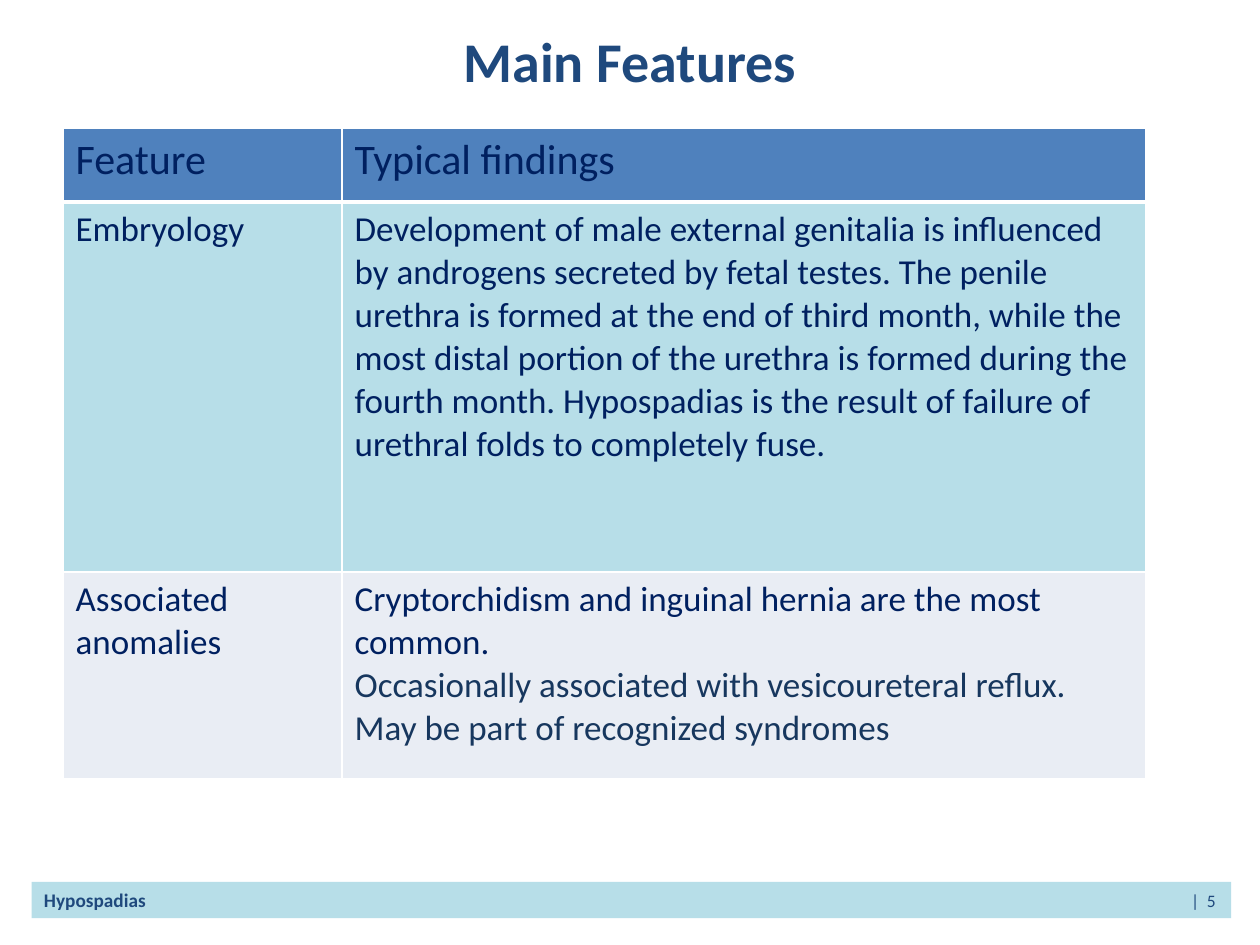
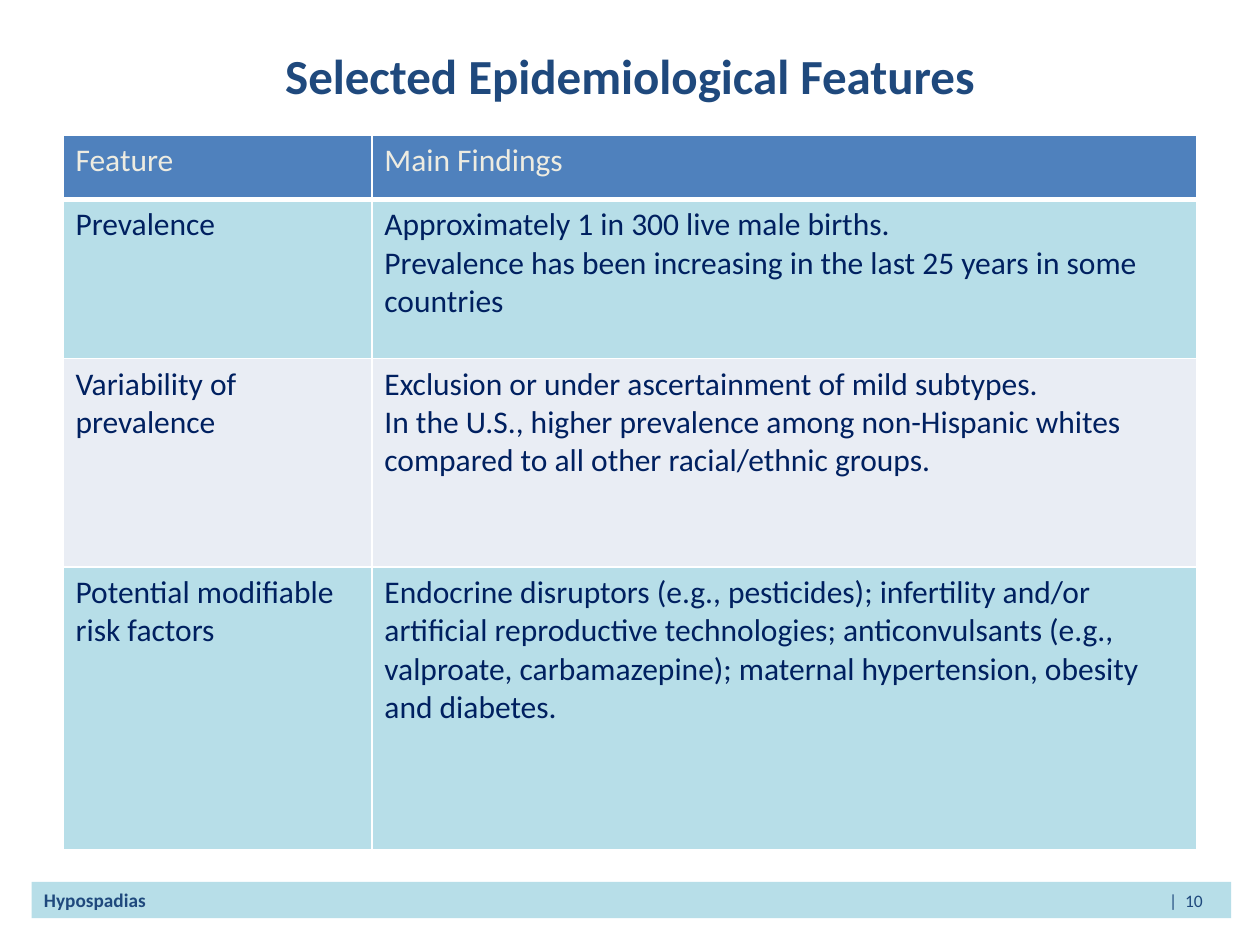
from dataclasses import dataclass

from lxml import etree
from pptx import Presentation
from pptx.dml.color import RGBColor
from pptx.enum.shapes import MSO_SHAPE
from pptx.enum.text import MSO_ANCHOR, PP_ALIGN
from pptx.oxml.ns import qn
from pptx.util import Pt

RECTANGLE = MSO_SHAPE.RECTANGLE
MIDDLE, TOP = MSO_ANCHOR.MIDDLE, MSO_ANCHOR.TOP
LEFT, CENTER = PP_ALIGN.LEFT, PP_ALIGN.CENTER
BLANK_LAYOUT = 6


@dataclass(frozen=True)
class Theme:
    font: str = "Calibri"
    heading: str = "1F497D"
    body: str = "002060"
    secondary: str = "17375E"
    pale: str = "EEECE1"
    header_fill: str = "4F81BD"
    band_fills: tuple = ("B7DEE8", "E9EDF4")
    border: str = "FFFFFF"
    border_width: float = 1
    header_rule: float = 3
    topic_size: float = 11
    page_size: float = 10


class Deck:
    """Holds the theme and the slide being built."""

    def __init__(self, presentation, theme):
        self.presentation = presentation
        self.theme = theme
        self.slide = None

    def new_slide(self):
        layout = self.presentation.slide_layouts[BLANK_LAYOUT]
        self.slide = self.presentation.slides.add_slide(layout)

    def run(self, paragraph, text, size, color, bold=False):
        run = paragraph.add_run()
        run.text = text
        run.font.name = self.theme.font
        run.font.size = Pt(size)
        run.font.bold = bold
        run.font.color.rgb = RGBColor.from_string(color)

    def title(self, text, top, height, size):
        shape = self.slide.shapes.add_textbox(Pt(36), Pt(top), Pt(648), Pt(height))
        frame = shape.text_frame
        frame.word_wrap = True
        frame.vertical_anchor = MIDDLE
        paragraph = frame.paragraphs[0]
        paragraph.alignment = CENTER
        self.run(paragraph, text, size, self.theme.heading, bold=True)

    def footer(self, topic, page, page_tab):
        theme = self.theme
        shape = self.slide.shapes.add_shape(RECTANGLE, Pt(18), Pt(504), Pt(685.5), Pt(20.7))
        shape.shadow.inherit = False
        shape.fill.solid()
        shape.fill.fore_color.rgb = RGBColor.from_string(theme.band_fills[0])
        shape.line.fill.background()
        shape.text_frame.vertical_anchor = TOP
        paragraph = shape.text_frame.paragraphs[0]
        paragraph.alignment = LEFT
        # A tab stop places the page number
        properties = paragraph._p.get_or_add_pPr()
        tabs = etree.SubElement(properties, qn("a:tabLst"))
        etree.SubElement(tabs, qn("a:tab"), pos=str(Pt(page_tab)), algn="l")
        self.run(paragraph, topic + "\t", theme.topic_size, theme.heading, bold=True)
        self.run(paragraph, f"|  {page}", theme.page_size, theme.heading)

    def borders(self, cell, bottom_width):
        properties = cell._tc.get_or_add_tcPr()
        for side in "LRTB":
            width = bottom_width if side == "B" else self.theme.border_width
            line = etree.SubElement(properties, qn(f"a:ln{side}"), w=str(Pt(width)))
            fill = etree.SubElement(line, qn("a:solidFill"))
            etree.SubElement(fill, qn("a:srgbClr"), val=self.theme.border)

    def cell(self, cell, paragraphs, size, fill, bottom_width):
        """Each paragraph is a (text, color) pair."""
        self.borders(cell, bottom_width)
        cell.fill.solid()
        cell.fill.fore_color.rgb = RGBColor.from_string(fill)
        frame = cell.text_frame
        for index, (text, color) in enumerate(paragraphs):
            paragraph = frame.add_paragraph() if index else frame.paragraphs[0]
            self.run(paragraph, text, size, color)

    def table(self, top, widths, heights, header, rows, header_size, header_color, body_size):
        theme = self.theme
        frame = self.slide.shapes.add_table(
            len(heights), len(widths), Pt(36), Pt(top), Pt(sum(widths)), Pt(sum(heights))
        )
        table = frame.table
        for column, width in zip(table.columns, widths):
            column.width = Pt(width)
        for row, height in zip(table.rows, heights):
            row.height = Pt(height)
        for column, text in enumerate(header):
            self.cell(table.cell(0, column), [(text, header_color)], header_size,
                      theme.header_fill, theme.header_rule)
        for index, (feature, findings) in enumerate(rows):
            fill = theme.band_fills[index % 2]
            for column, paragraphs in enumerate(([(feature, theme.body)], findings)):
                self.cell(table.cell(index + 1, column), paragraphs, body_size,
                          fill, theme.border_width)


def main():
    presentation = Presentation()
    presentation.slide_width, presentation.slide_height = Pt(720), Pt(540)
    theme = Theme()
    deck = Deck(presentation, theme)
    topic = "Hypospadias"

    # Main features
    deck.new_slide()
    deck.title("Main Features", top=15, height=39, size=32)
    deck.table(
        top=73.5, widths=(159.5, 459), heights=(42, 211.5, 118),
        header=("Feature", "Typical findings"),
        rows=[
            ("Embryology", [
                ("Development of male external genitalia is influenced by androgens secreted "
                 "by fetal testes. The penile urethra is formed at the end of third month, "
                 "while the most distal portion of the urethra is formed during the fourth "
                 "month. Hypospadias is the result of failure of urethral folds to completely "
                 "fuse.", theme.body),
            ]),
            ("Associated anomalies", [
                ("Cryptorchidism and inguinal hernia are the most common.", theme.body),
                ("Occasionally associated with vesicoureteral reflux.", theme.secondary),
                ("May be part of recognized syndromes", theme.secondary),
            ]),
        ],
        header_size=24, header_color=theme.body, body_size=20,
    )
    deck.footer(topic, page=5, page_tab=655.5)

    # Epidemiology
    deck.new_slide()
    deck.title("Selected Epidemiological Features", top=-2, height=90, size=28)
    deck.table(
        top=77.5, widths=(176.5, 471.5), heights=(36.5, 91, 119, 161.5),
        header=("Feature", "Main Findings"),
        rows=[
            ("Prevalence", [
                ("Approximately 1 in 300 live male births.", theme.body),
                ("Prevalence has been increasing in the last 25 years in some countries",
                 theme.body),
            ]),
            ("Variability of prevalence", [
                ("Exclusion or under ascertainment of mild subtypes.", theme.body),
                ("In the U.S., higher prevalence among non-Hispanic whites compared to all "
                 "other racial/ethnic groups.", theme.body),
            ]),
            ("Potential modifiable risk factors", [
                ("Endocrine disruptors (e.g., pesticides); infertility and/or artificial "
                 "reproductive technologies; anticonvulsants (e.g., valproate, "
                 "carbamazepine); maternal hypertension, obesity and diabetes.", theme.body),
            ]),
        ],
        header_size=18, header_color=theme.pale, body_size=18,
    )
    deck.footer(topic, page=10, page_tab=643)

    presentation.save("out.pptx")


if __name__ == "__main__":
    main()
